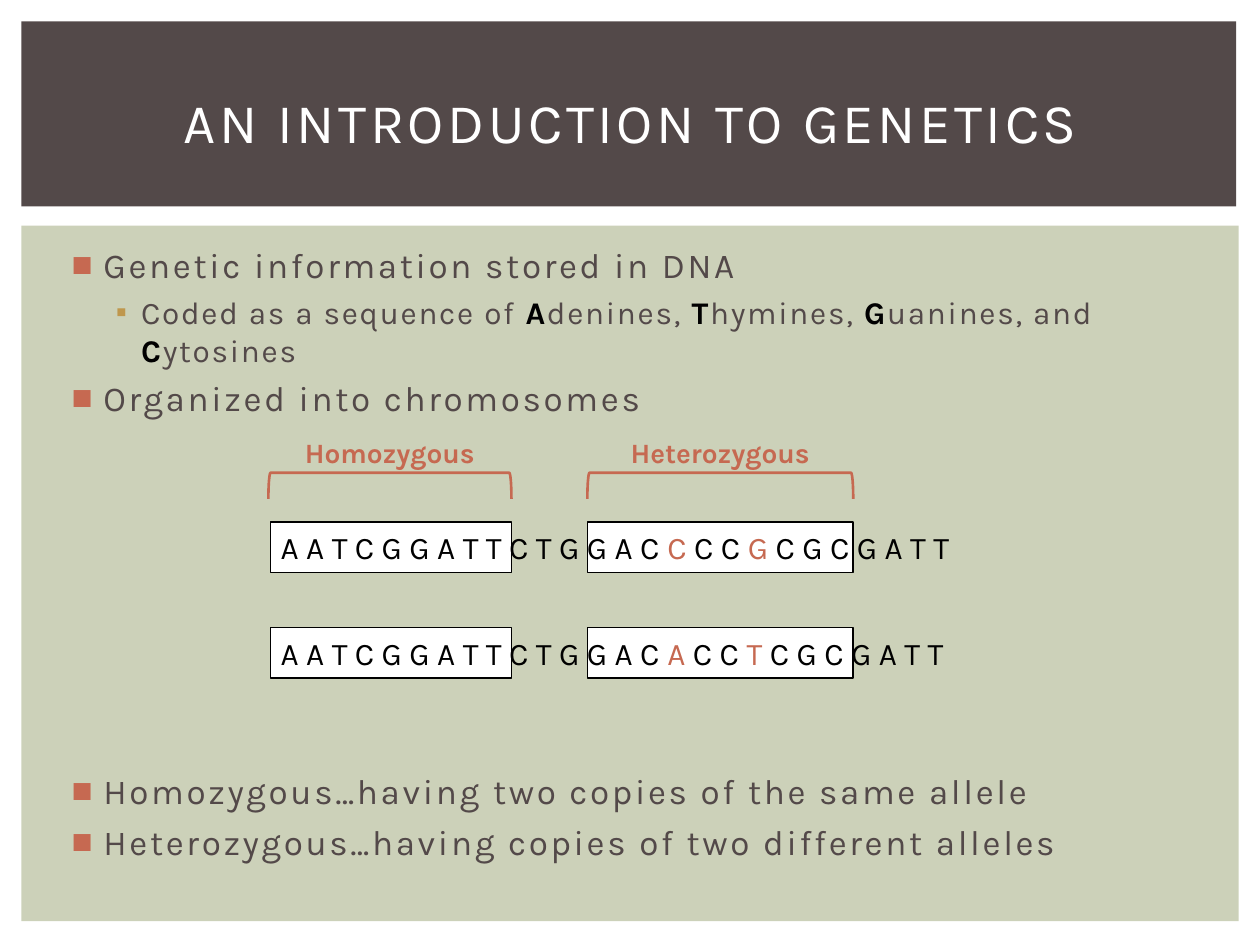
from lxml import etree
from pptx import Presentation
from pptx import util as u
from pptx.dml import color
from pptx.enum import shapes, text
from pptx.oxml import ns

COLORS = {
    "banner": "534949",
    "panel": "CCD1B9",
    "accent": "C66951",
    "sub_bullet": "BF974D",
    "white": "FFFFFF",
    "black": "000000",
}
FONT = "Karla"
LEVELS = [
    {"size": 20, "spacing": 1.5, "left": 0.76, "hang": 0.64, "bullet": "■", "color": "accent", "before": 4.7},
    {"size": 18, "spacing": 1, "left": 1.52, "hang": 0.51, "bullet": "▪", "color": "sub_bullet", "before": 4.2},
]


def rgb(name):
    return color.RGBColor.from_string(COLORS[name])


def place(shape, left, top, width, height):
    shape.left, shape.top = u.Cm(left), u.Cm(top)
    shape.width, shape.height = u.Cm(width), u.Cm(height)


def add_run(paragraph, content, size=18, fill="black", bold=False, spacing=0):
    run = paragraph.add_run()
    run.text = content
    run.font.name = FONT
    run.font.size = u.Pt(size)
    run.font.bold = bold
    run.font.color.rgb = rgb(fill)
    if spacing:
        run.font._element.set("spc", str(int(spacing * 100)))


def add_shape(slide, kind, left, top, width, height, fill=None, line=None, weight=0.79):
    shape = slide.shapes.add_shape(kind, u.Cm(left), u.Cm(top), u.Cm(width), u.Cm(height))
    shape.shadow.inherit = False
    if fill:
        shape.fill.solid()
        shape.fill.fore_color.rgb = rgb(fill)
    else:
        shape.fill.background()
    if line:
        shape.line.color.rgb = rgb(line)
        shape.line.width = u.Pt(weight)
    else:
        shape.line.fill.background()
    return shape


def add_text_box(slide, left, top, width, height, align=text.PP_ALIGN.LEFT):
    box = slide.shapes.add_textbox(u.Cm(left), u.Cm(top), u.Cm(width), u.Cm(height))
    box.text_frame.word_wrap = True
    box.text_frame.auto_size = text.MSO_AUTO_SIZE.SHAPE_TO_FIT_TEXT
    paragraph = box.text_frame.paragraphs[0]
    paragraph.alignment = align
    return paragraph


def add_bullet(paragraph, parts, level=0, extra_gap=0):
    style = LEVELS[level]
    paragraph.level = level
    paragraph.space_before = u.Pt(style["before"] + extra_gap)
    properties = paragraph._p.get_or_add_pPr()
    properties.set("marL", str(u.Cm(style["left"])))
    properties.set("indent", str(-u.Cm(style["hang"])))
    bullet_color = etree.SubElement(properties, ns.qn("a:buClr"))
    etree.SubElement(bullet_color, ns.qn("a:srgbClr")).set("val", COLORS[style["color"]])
    etree.SubElement(properties, ns.qn("a:buChar")).set("char", style["bullet"])
    for content in parts:
        bold = len(content) == 1
        add_run(paragraph, content, style["size"], "black" if bold else "banner", bold, style["spacing"])


def build_title(slide, left, top, width, height):
    title = slide.shapes.title
    place(title, left, top, width, height)
    frame = title.text_frame
    frame.auto_size = text.MSO_AUTO_SIZE.NONE
    frame.vertical_anchor = text.MSO_ANCHOR.MIDDLE
    paragraph = frame.paragraphs[0]
    paragraph.alignment = text.PP_ALIGN.CENTER
    add_run(paragraph, "AN INTRODUCTION TO GENETICS", 32, "white", spacing=2)


def build_body(slide, left, top, width, height):
    body = slide.placeholders[1]
    place(body, left, top, width, height)
    frame = body.text_frame
    frame.auto_size = text.MSO_AUTO_SIZE.NONE
    bullets = [
        (["Genetic information stored in DNA"], 0, 0),
        (["Coded as a sequence of ", "A", "denines, ", "T", "hymines, ", "G", "uanines, and ", "C", "ytosines"], 1, 0),
        (["Organized into chromosomes"], 0, 0),
        (["Homozygous…having two copies of the same allele"], 0, 196),
        (["Heterozygous…having copies of two different alleles"], 0, 0),
    ]
    for index, (parts, level, extra_gap) in enumerate(bullets):
        paragraph = frame.add_paragraph() if index else frame.paragraphs[0]
        add_bullet(paragraph, parts, level, extra_gap)


def build_sequence(slide, left, top, width, height, alleles):
    for offset, box_width in [(0.05, 4.85), (6.43, 5.36)]:
        add_shape(slide, shapes.MSO_SHAPE.RECTANGLE, left + offset, top, box_width, height, "white", "black")
    paragraph = add_text_box(slide, left, top, width, height)
    first, second = alleles
    add_run(paragraph, "A A T C G G A T T C T G G A C ")
    add_run(paragraph, first, fill="accent")
    add_run(paragraph, " C C ")
    add_run(paragraph, second, fill="accent")
    add_run(paragraph, " C G C G A T T")


def build_bracket(slide, left, top, width, height, label):
    depth = 0.53
    bracket_top = top + height - depth
    bracket = add_shape(
        slide, shapes.MSO_SHAPE.LEFT_BRACKET,
        left + (width - depth) / 2, bracket_top + (depth - width) / 2, depth, width,
        line="accent", weight=1.5,
    )
    bracket.rotation = 90
    paragraph = add_text_box(slide, left, top, width, 0.94, text.PP_ALIGN.CENTER)
    add_run(paragraph, label, 16, "accent", True)


def main():
    presentation = Presentation()
    presentation.slide_width, presentation.slide_height = u.Cm(25.4), u.Cm(19.05)
    slide = presentation.slides.add_slide(presentation.slide_layouts[1])
    panel = add_shape(slide, shapes.MSO_SHAPE.RECTANGLE, 0.43, 4.55, 24.54, 14.02, "panel")
    banner = add_shape(slide, shapes.MSO_SHAPE.RECTANGLE, 0.43, 0.43, 24.49, 3.73, "banner")
    for placeholder in (slide.shapes.title, slide.placeholders[1]):
        banner._element.addnext(placeholder._element)
    build_title(slide, 1.07, 0.99, 23.29, 2.92)
    build_body(slide, 1.07, 4.78, 23.34, 12.24)
    for row, alleles in enumerate(["CG", "AT"]):
        build_sequence(slide, 5.41, 10.52 + row * 2.13, 14.55, 1.02, alleles)
    build_bracket(slide, 5.41, 8.66, 4.9, 1.4, "Homozygous")
    build_bracket(slide, 11.84, 8.66, 5.36, 1.4, "Heterozygous")
    presentation.save("out.pptx")


if __name__ == "__main__":
    main()
